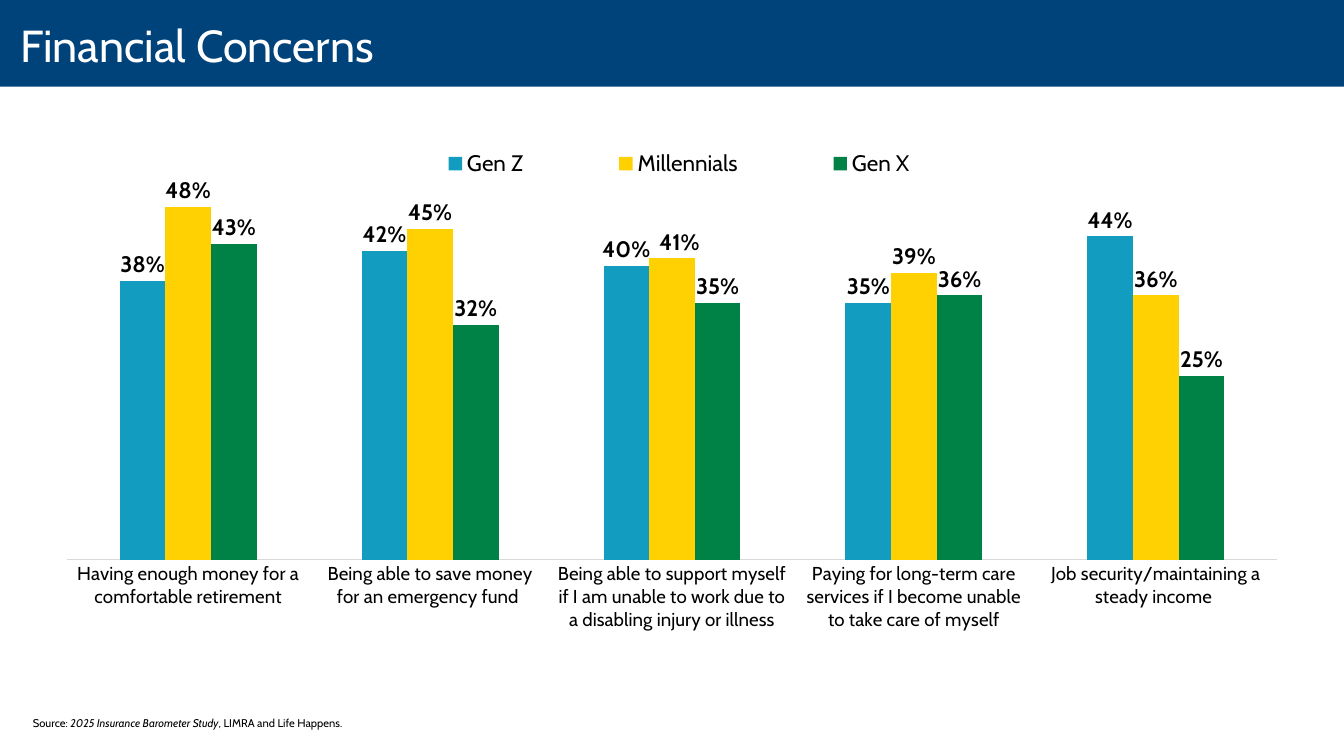
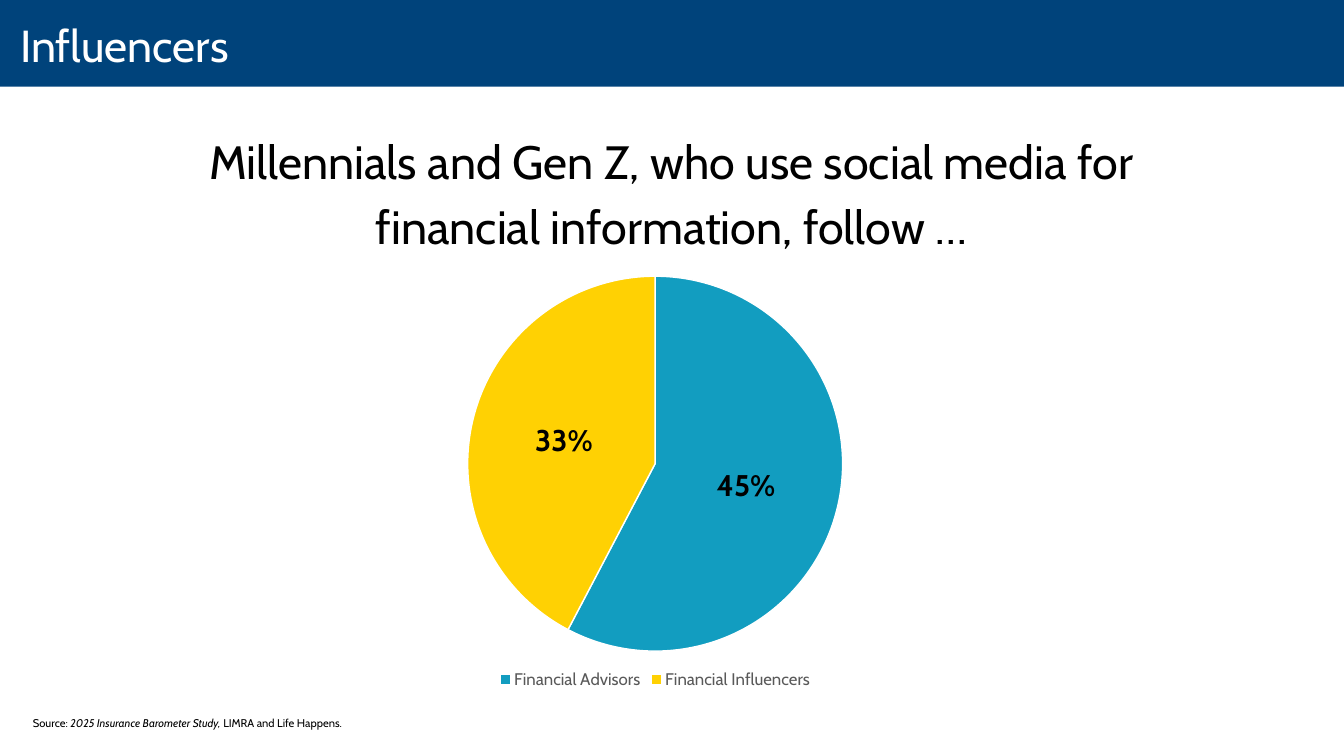
import dataclasses
import typing

import pptx
import pptx.chart.chart
import pptx.chart.data
import pptx.dml.color
import pptx.enum.chart
import pptx.enum.shapes
import pptx.enum.text
import pptx.oxml
import pptx.oxml.ns
import pptx.presentation
import pptx.slide
import pptx.text.text
import pptx.util

Inches = pptx.util.Inches
RGBColor = pptx.dml.color.RGBColor

NAVY = RGBColor(0x00, 0x43, 0x7B)
BLUE = RGBColor(0x12, 0x9D, 0xC0)
YELLOW = RGBColor(0xFF, 0xD1, 0x03)
GREEN = RGBColor(0x00, 0x81, 0x45)
BLACK = RGBColor(0x00, 0x00, 0x00)
WHITE = RGBColor(0xFF, 0xFF, 0xFF)
DARK_GRAY = RGBColor(0x59, 0x59, 0x59)
LIGHT_GRAY = RGBColor(0xD9, 0xD9, 0xD9)
FONT = "Cabin"
CHART_FONT = "Montserrat"
PERCENT = "0%"


@dataclasses.dataclass(frozen=True)
class Box:
    left: float
    top: float
    width: float
    height: float

    def lengths(self) -> tuple[int, ...]:
        return tuple(Inches(value) for value in dataclasses.astuple(self))

    def fractions_of(self, outer: "Box") -> dict[str, float]:
        return {
            "x": (self.left - outer.left) / outer.width,
            "y": (self.top - outer.top) / outer.height,
            "w": self.width / outer.width,
            "h": self.height / outer.height,
        }


@dataclasses.dataclass(frozen=True)
class TextRun:
    text: str
    italic: bool = False


@dataclasses.dataclass(frozen=True)
class Generation:
    name: str
    values: tuple[float, ...]
    color: RGBColor


SLIDE_WIDTH, SLIDE_HEIGHT = 20, 11.25
BAND = Box(0, 0, SLIDE_WIDTH, 1.29)
TITLE = Box(0, 0, SLIDE_WIDTH, 1.32)
SOURCE = Box(0.39, 10.61, 13.67, 0.3)
CONCERNS_CHART = Box(0.62, 1.59, 18.76, 8.58)
CONCERNS_PLOT = Box(1, 1.77, 18, 6.56)
CONCERNS_LEGEND = Box(5.36, 2.09, 9.49, 0.69)
FOLLOWED_CHART = Box(5.21, 3.97, 9.08, 6.34)
FOLLOWED_PLOT = Box(6.96, 4.11, 5.58, 5.58)
LABEL_SHIFT = 0.11

CONCERNS = (
    "Having enough money for a comfortable retirement",
    "Being able to save money for an emergency fund ",
    "Being able to support myself if I am unable to work due to a disabling injury or illness",
    "Paying for long-term care services if I become unable to take care of myself",
    "Job security/maintaining a steady income ",
)
GENERATIONS = (
    Generation("Gen Z", (0.38, 0.42, 0.40, 0.35, 0.44), BLUE),
    Generation("Millennials", (0.48, 0.45, 0.41, 0.39, 0.36), YELLOW),
    Generation("Gen X", (0.43, 0.32, 0.35, 0.36, 0.25), GREEN),
)


def format_font(
    font: pptx.text.text.Font,
    size: float,
    color: RGBColor = BLACK,
    bold: bool = False,
    italic: bool = False,
    name: str = FONT,
) -> None:
    font.name = name
    font.size = pptx.util.Pt(size)
    font.bold = bold
    font.italic = italic
    font.color.rgb = color


def write_text(
    frame: pptx.text.text.TextFrame,
    *runs: TextRun,
    size: float,
    color: RGBColor = BLACK,
    alignment: pptx.enum.text.PP_ALIGN = pptx.enum.text.PP_ALIGN.LEFT,
    line_spacing: float = 1.0,
) -> None:
    paragraph = frame.paragraphs[0]
    paragraph.alignment = alignment
    paragraph.line_spacing = line_spacing
    for text_run in runs:
        run = paragraph.add_run()
        run.text = text_run.text
        format_font(run.font, size, color, italic=text_run.italic)


def add_text_box(
    slide: pptx.slide.Slide, box: Box, *runs: TextRun, **text_format: typing.Any
) -> None:
    frame = slide.shapes.add_textbox(*box.lengths()).text_frame
    frame.word_wrap = True
    frame.auto_size = pptx.enum.text.MSO_AUTO_SIZE.SHAPE_TO_FIT_TEXT
    write_text(frame, *runs, **text_format)


def add_title_band(slide: pptx.slide.Slide) -> None:
    band = slide.shapes.add_shape(
        pptx.enum.shapes.MSO_SHAPE.RECTANGLE, *BAND.lengths()
    )
    band.shadow.inherit = False
    band.fill.solid()
    band.fill.fore_color.rgb = NAVY
    band.line.fill.background()
    slide.shapes._spTree.insert(2, band._element)


def add_content_slide(
    presentation: pptx.presentation.Presentation,
    heading: str,
    *source_runs: TextRun,
) -> pptx.slide.Slide:
    slide = presentation.slides.add_slide(
        presentation.slide_layouts.get_by_name("Title Only")
    )
    add_title_band(slide)
    title = slide.shapes.title
    title.left, title.top, title.width, title.height = TITLE.lengths()
    frame = title.text_frame
    frame.margin_left, frame.margin_right = Inches(0.3), Inches(0.2)
    frame.margin_top = frame.margin_bottom = 0
    frame.word_wrap = False
    frame.auto_size = pptx.enum.text.MSO_AUTO_SIZE.NONE
    frame.vertical_anchor = pptx.enum.text.MSO_ANCHOR.MIDDLE
    write_text(frame, TextRun(heading), size=48, color=WHITE)
    add_text_box(slide, SOURCE, *source_runs, size=12)
    return slide


def set_layout(element: typing.Any, position: int, **settings: typing.Any) -> None:
    for layout in element.findall(pptx.oxml.ns.qn("c:layout")):
        element.remove(layout)
    children = "".join(f'<c:{tag} val="{value}"/>' for tag, value in settings.items())
    element.insert(
        position,
        pptx.oxml.parse_xml(
            f'<c:layout {pptx.oxml.ns.nsdecls("c")}>'
            f"<c:manualLayout>{children}</c:manualLayout></c:layout>"
        ),
    )


def place_plot(chart: pptx.chart.chart.Chart, plot_box: Box, chart_box: Box) -> None:
    set_layout(
        chart._chartSpace.chart.plotArea,
        0,
        layoutTarget="inner",
        xMode="edge",
        yMode="edge",
        **plot_box.fractions_of(chart_box),
    )


def add_chart(
    slide: pptx.slide.Slide,
    kind: pptx.enum.chart.XL_CHART_TYPE,
    box: Box,
    plot_box: Box,
    categories: typing.Iterable[str],
    series: typing.Iterable[tuple[str, tuple[float, ...]]],
    legend_size: float,
    legend_color: RGBColor,
) -> pptx.chart.chart.Chart:
    data = pptx.chart.data.CategoryChartData(number_format=PERCENT)
    data.categories = categories
    for name, values in series:
        data.add_series(name, values)
    chart = slide.shapes.add_chart(kind, *box.lengths(), data).chart
    chart.has_title = False
    chart.has_legend = True
    chart.legend.position = pptx.enum.chart.XL_LEGEND_POSITION.BOTTOM
    chart.legend.include_in_layout = False
    format_font(chart.legend.font, legend_size, legend_color)
    place_plot(chart, plot_box, box)
    return chart


def show_percentages(
    owner: typing.Any, size: float, position: pptx.enum.chart.XL_LABEL_POSITION
) -> None:
    labels = owner.data_labels
    labels.show_value = True
    labels.number_format = PERCENT
    labels.number_format_is_linked = False
    labels.position = position
    format_font(labels.font, size, bold=True)


def fill_solid(owner: typing.Any, color: RGBColor) -> None:
    owner.format.fill.solid()
    owner.format.fill.fore_color.rgb = color


def add_concerns_chart(slide: pptx.slide.Slide) -> None:
    chart = add_chart(
        slide,
        pptx.enum.chart.XL_CHART_TYPE.COLUMN_CLUSTERED,
        CONCERNS_CHART,
        CONCERNS_PLOT,
        CONCERNS,
        [(generation.name, generation.values) for generation in GENERATIONS],
        legend_size=24,
        legend_color=BLACK,
    )
    format_font(chart.font, 18, name=CHART_FONT)
    legend_fractions = CONCERNS_LEGEND.fractions_of(CONCERNS_CHART)
    set_layout(chart.legend._element, 1, xMode="edge", yMode="edge", **legend_fractions)

    plot = chart.plots[0]
    plot.gap_width = 230
    plot.overlap = 0
    plot.vary_by_categories = False
    outside_end = pptx.enum.chart.XL_LABEL_POSITION.OUTSIDE_END
    for series, generation in zip(plot.series, GENERATIONS):
        fill_solid(series, generation.color)
        show_percentages(series, 24, outside_end)

    shifted_label = plot.series[1].points[2].data_label
    format_font(shifted_label.font, 24, bold=True)
    shifted_label.position = outside_end
    set_layout(shifted_label._dLbl, 1, x=LABEL_SHIFT / CONCERNS_CHART.width, y=0)

    category_axis = chart.category_axis
    category_axis.major_tick_mark = pptx.enum.chart.XL_TICK_MARK.NONE
    category_axis.format.line.color.rgb = LIGHT_GRAY
    category_axis.format.line.width = pptx.util.Pt(0.75)
    format_font(category_axis.tick_labels.font, 20)
    value_axis = chart.value_axis
    value_axis.visible = False
    value_axis.has_major_gridlines = False
    value_axis.minimum_scale = 0
    value_axis.maximum_scale = 0.6


def add_followed_chart(slide: pptx.slide.Slide) -> None:
    chart = add_chart(
        slide,
        pptx.enum.chart.XL_CHART_TYPE.PIE,
        FOLLOWED_CHART,
        FOLLOWED_PLOT,
        ("Financial Advisors", "Financial Influencers"),
        [("Series 1", (0.45, 0.33))],
        legend_size=18,
        legend_color=DARK_GRAY,
    )
    format_font(chart.font, 10)
    plot = chart.plots[0]
    plot.vary_by_categories = True
    series = plot.series[0]
    for index, color in enumerate((BLUE, YELLOW)):
        point = series.points[index]
        fill_solid(point, color)
        point.format.line.color.rgb = WHITE
        point.format.line.width = pptx.util.Pt(1.5)
    show_percentages(series, 32, pptx.enum.chart.XL_LABEL_POSITION.CENTER)


def main() -> None:
    presentation = pptx.Presentation()
    presentation.slide_width = Inches(SLIDE_WIDTH)
    presentation.slide_height = Inches(SLIDE_HEIGHT)

    concerns = add_content_slide(
        presentation,
        "Financial Concerns",
        TextRun("Source: "),
        TextRun("2025 Insurance Barometer Study", italic=True),
        TextRun(", LIMRA and Life Happens."),
    )
    add_concerns_chart(concerns)

    influencers = add_content_slide(
        presentation,
        "Influencers",
        TextRun("Source: "),
        TextRun("2025 Insurance Barometer Study, ", italic=True),
        TextRun("LIMRA and Life Happens."),
    )
    heading = "Millennials and Gen Z, who use social media for financial information, follow …"
    add_text_box(
        influencers,
        Box(2.13, 1.81, 15.73, 1.99),
        TextRun(heading),
        size=50,
        alignment=pptx.enum.text.PP_ALIGN.CENTER,
        line_spacing=1.15,
    )
    add_followed_chart(influencers)
    presentation.save("out.pptx")


if __name__ == "__main__":
    main()
